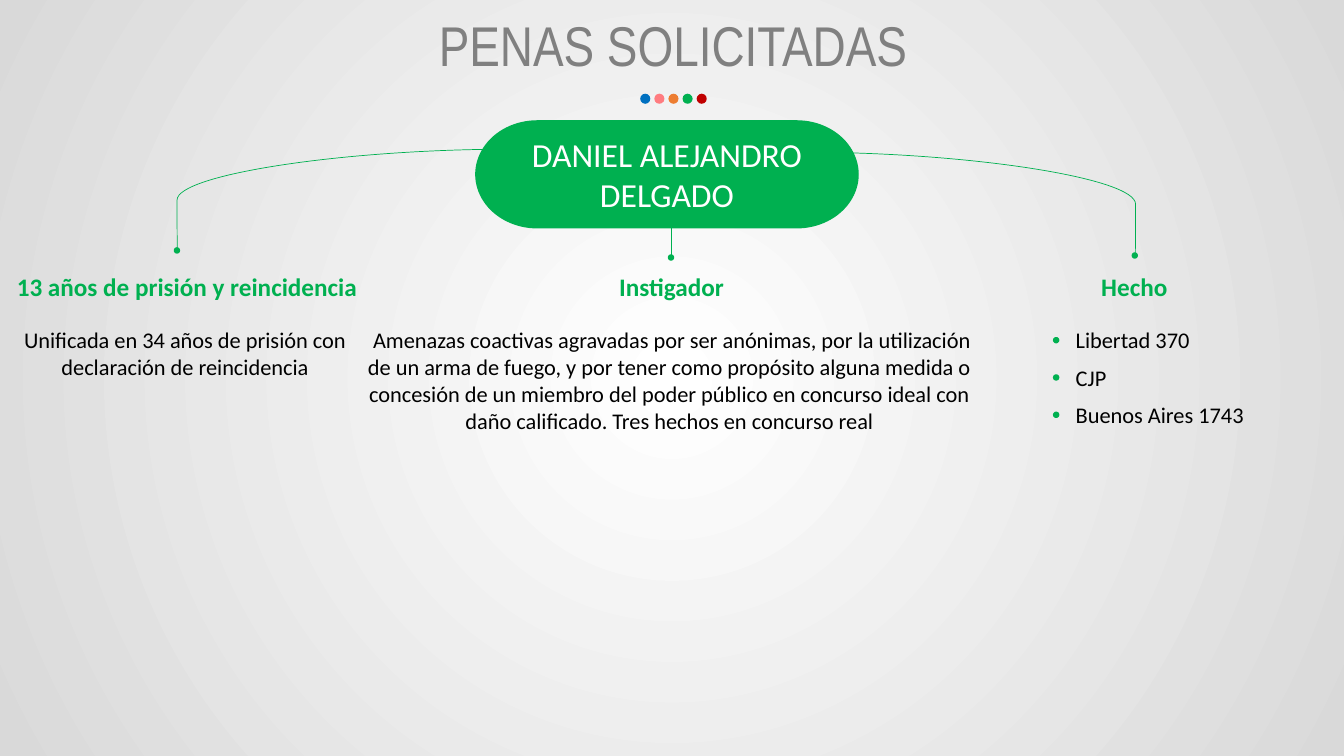
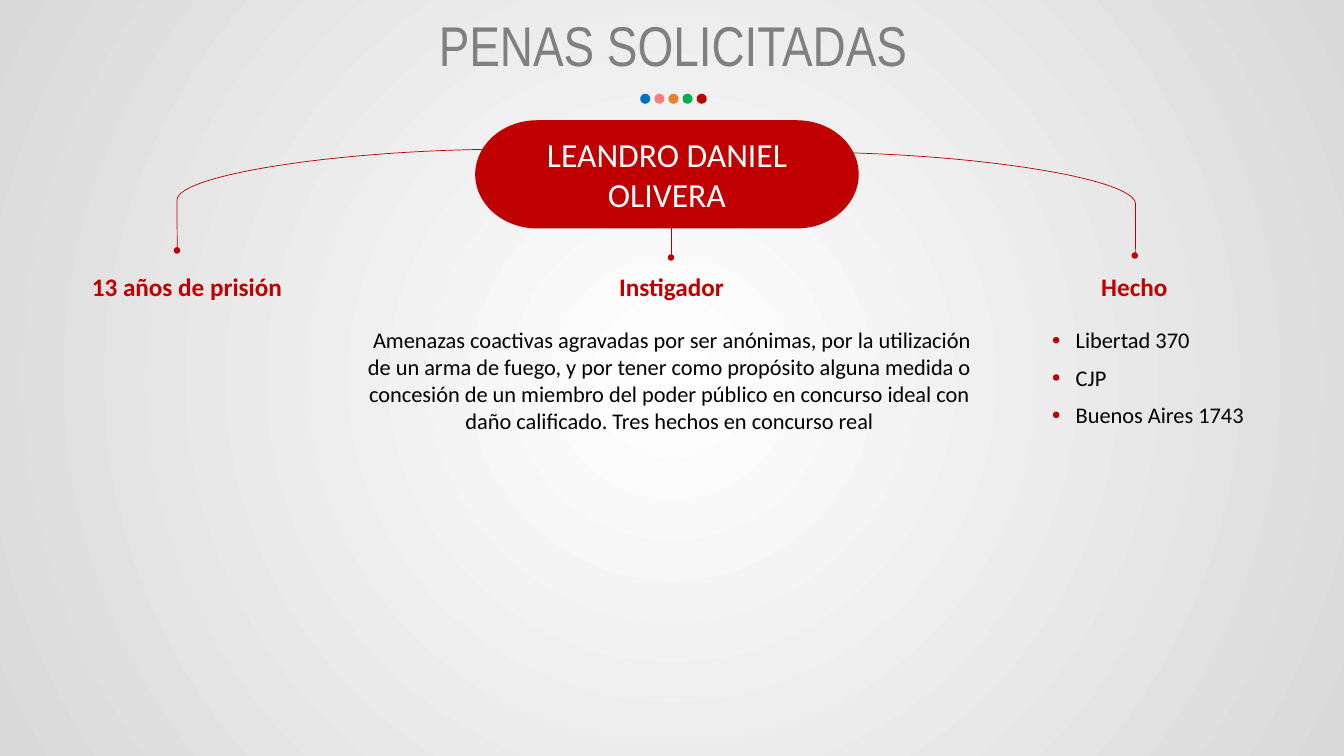
from dataclasses import dataclass
from typing import Any

from lxml import etree
from pptx import Presentation
from pptx.dml.color import RGBColor
from pptx.enum import shapes as es, text as et
from pptx.oxml import ns
from pptx.util import Inches, Pt

HUES = {
    "blue": "0070C0",
    "pink": "FF7C80",
    "orange": "ED7D31",
    "green": "00B050",
    "red": "C00000",
    "gray": "808080",
    "black": "000000",
    "white": "FFFFFF",
    "edge": "D9D9D9",
}
BEADS = ("blue", "pink", "orange", "green", "red")
FACTS = ("Libertad 370", "CJP", "Buenos Aires 1743")
CHARGE = (
    " Amenazas coactivas agravadas por ser anónimas, por la utilización de un arma "
    "de fuego, y por tener como propósito alguna medida o concesión de un miembro "
    "del poder público en concurso ideal con daño calificado. Tres hechos en "
    "concurso real"
)
MID, LEFT = et.PP_ALIGN.CENTER, et.PP_ALIGN.LEFT
TITLE = {"size": Pt(40), "name": "Arial Narrow"}
NAME = {"size": Pt(24), "name": "Calibri"}
HEAD = {"size": Pt(18), "name": "Calibri", "bold": True}
BODY = {"size": Pt(16), "name": "Calibri"}


@dataclass(frozen=True)
class Box:
    x: float
    y: float
    w: float
    h: float

    def span(self) -> list[int]:
        return [Inches(n) for n in (self.x, self.y, self.w, self.h)]


@dataclass(frozen=True)
class Arm:
    start: tuple[float, float]
    end: tuple[float, float]
    curved: bool = False


@dataclass(frozen=True)
class Case:
    name: str
    hue: str
    term: str
    note: str = ""


STEM = Arm((6.66, 2.06), (6.66, 2.56))
CURVES = (
    Arm((5.06, 1.48), (1.76, 2.49), True),
    Arm((7.96, 1.51), (11.26, 2.54), True),
)
CASES = (
    Case("DANIEL ALEJANDRO DELGADO", "green", "13 años de prisión y reincidencia",
         "Unificada en 34 años de prisión con declaración de reincidencia"),
    Case("LEANDRO DANIEL OLIVERA", "red", "13 años de prisión"),
)


def tint(hue: str) -> RGBColor:
    return RGBColor.from_string(HUES[hue])


def style(item: Any, form: dict) -> None:
    for key, val in form.items():
        setattr(item, key, val)


def write(frame: Any, words: str, form: dict, hue: str, align: Any = MID) -> Any:
    frame.word_wrap = True
    para = frame.paragraphs[0]
    para.alignment = align
    run = para.add_run()
    run.text = words
    style(run.font, form)
    run.font.color.rgb = tint(hue)
    return para


def label(slide: Any, box: Box, words: str, form: dict, hue: str,
          align: Any = MID) -> None:
    frame = slide.shapes.add_textbox(*box.span()).text_frame
    write(frame, words, form, hue, align)
    frame.auto_size = et.MSO_AUTO_SIZE.SHAPE_TO_FIT_TEXT


def solid(home: Any, kind: Any, box: Box, hue: str, edge: bool = True) -> Any:
    shape = home.add_shape(kind, *box.span())
    shape.shadow.inherit = False
    shape.fill.solid()
    shape.fill.fore_color.rgb = tint(hue)
    if edge:
        shape.line.color.rgb = tint(hue)
        shape.line.width = Pt(1)
    else:
        shape.line.fill.background()
    return shape


def dot(slide: Any, x: float, y: float, hue: str) -> None:
    box = Box(x - 0.03, y - 0.03, 0.05, 0.05)
    solid(slide.shapes, es.MSO_SHAPE.OVAL, box, hue)


def link(slide: Any, arm: Arm, hue: str) -> None:
    kind = es.MSO_CONNECTOR.CURVE if arm.curved else es.MSO_CONNECTOR.STRAIGHT
    ends = [Inches(n) for n in arm.start + arm.end]
    wire = slide.shapes.add_connector(kind, *ends)
    wire.line.color.rgb = tint(hue)
    wire.line.width = Pt(0.5)
    props = wire.element.find(ns.qn("p:spPr"))
    etree.SubElement(props, ns.qn("a:effectLst"))
    if arm.curved:
        bends = props.find(".//" + ns.qn("a:avLst"))
        etree.SubElement(bends, ns.qn("a:gd"), name="adj1", fmla="val 100100")
    dot(slide, *arm.end, hue)


def glow(deck: Any) -> None:
    master = deck.slide_master
    fill = master.background.fill
    fill.gradient()
    for stop, hue in zip(fill.gradient_stops, ("white", "edge")):
        stop.color.rgb = tint(hue)
    grad = master.element.find(".//" + ns.qn("p:bg")).find(".//" + ns.qn("a:gradFill"))
    grad.remove(grad.find(ns.qn("a:lin")))
    ring = etree.SubElement(grad, ns.qn("a:path"), {"path": "circle"})
    etree.SubElement(ring, ns.qn("a:fillToRect"), dict.fromkeys("ltrb", "50000"))


def banner(slide: Any) -> None:
    frame = slide.shapes.add_textbox(*Box(2.26, 0.09, 8.83, 0.74).span()).text_frame
    frame.vertical_anchor = et.MSO_ANCHOR.BOTTOM
    para = write(frame, "PENAS SOLICITADAS", TITLE, "gray")
    para.line_spacing = 0.9
    group = slide.shapes.add_group_shape()
    for i, hue in enumerate(BEADS):
        box = Box(6.35 + 0.14 * i, 0.93, 0.1, 0.1)
        solid(group.shapes, es.MSO_SHAPE.OVAL, box, hue, False)


def draw(slide: Any, case: Case) -> None:
    banner(slide)
    link(slide, STEM, case.hue)
    pill = solid(slide.shapes, es.MSO_SHAPE.FLOWCHART_TERMINATOR,
                 Box(4.72, 1.2, 3.79, 1.06), case.hue)
    pill.text_frame.vertical_anchor = et.MSO_ANCHOR.MIDDLE
    write(pill.text_frame, case.name, NAME, "white")
    for arm in CURVES:
        link(slide, arm, case.hue)
    heads = ((0, 3.71, case.term), (4.92, 3.48, "Instigador"), (9.89, 2.72, "Hecho"))
    for x, wide, words in heads:
        label(slide, Box(x, 2.64, wide, 0.4), words, HEAD, case.hue)
    if case.note:
        label(slide, Box(0.09, 3.19, 3.49, 0.64), case.note, BODY, "black")
    label(slide, Box(3.54, 3.19, 6.2, 1.18), CHARGE, BODY, "black")
    for i, fact in enumerate(FACTS):
        y = 3.19 + 0.37 * i
        dot(slide, 10.48, y + 0.19, case.hue)
        label(slide, Box(10.57, y, 2.05, 0.37), fact, BODY, "black", LEFT)


def main() -> None:
    deck = Presentation()
    style(deck, {"slide_width": Inches(13.33), "slide_height": Inches(7.5)})
    glow(deck)
    for case in CASES:
        draw(deck.slides.add_slide(deck.slide_layouts[6]), case)
    deck.save("out.pptx")


if __name__ == "__main__":
    main()
